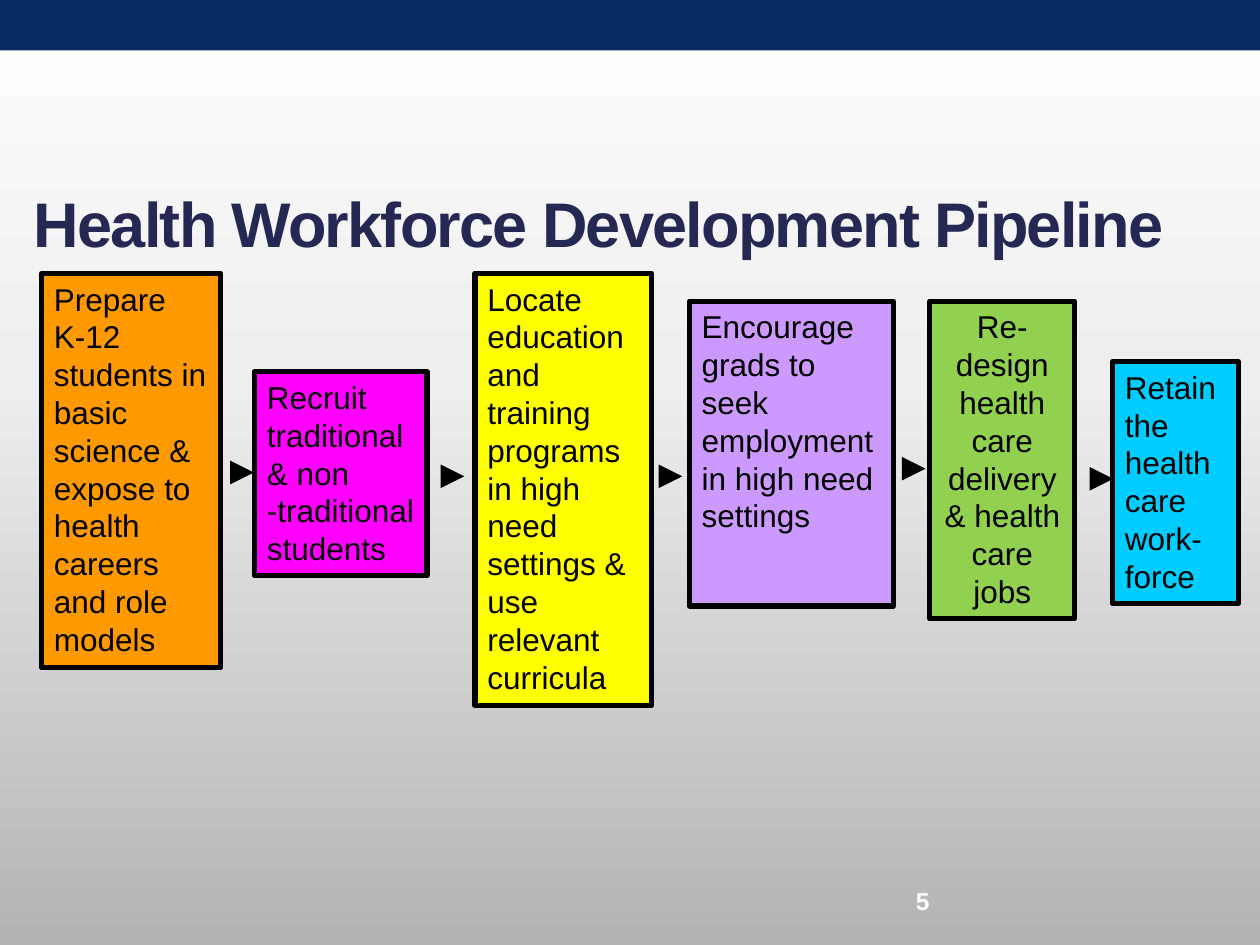
from copy import deepcopy
from dataclasses import dataclass

from lxml.etree import SubElement
from pptx import Presentation
from pptx.dml.color import RGBColor
from pptx.enum.shapes import MSO_CONNECTOR, MSO_SHAPE
from pptx.enum.text import MSO_ANCHOR, PP_ALIGN
from pptx.oxml.ns import qn
from pptx.shapes.autoshape import Shape
from pptx.slide import Slide
from pptx.util import Inches, Pt

WHITE = RGBColor(0xFF, 0xFF, 0xFF)
BLACK = RGBColor(0, 0, 0)
NAVY = RGBColor(0x07, 0x2B, 0x62)
INDIGO = RGBColor(0x24, 0x28, 0x52)
ORANGE = RGBColor(0xFF, 0x99, 0x00)
PINK = RGBColor(0xFF, 0x00, 0xFF)
YELLOW = RGBColor(0xFF, 0xFF, 0x00)
LILAC = RGBColor(0xCC, 0x99, 0xFF)
GREEN = RGBColor(0x92, 0xD0, 0x50)
CYAN = RGBColor(0x00, 0xCC, 0xFF)
SHADES = [(0, WHITE), (0.4, RGBColor(0xEE, 0xEE, 0xEE)),
          (1, RGBColor(0xB4, 0xB4, 0xB4))]

FONT = "Arial"
WIDTH, HEIGHT = Inches(10), Inches(7.5)
CELL = WIDTH / 100  # square grid: 100 columns by 75 rows
REACH = 1.85  # arrow length in columns


@dataclass
class Area:
    col: float
    row: float
    cols: float
    rows: float

    def box(self) -> list[int]:
        return [grid(n) for n in (self.col, self.row, self.cols, self.rows)]


@dataclass
class Stage:
    text: str
    area: Area
    fill: RGBColor
    align: PP_ALIGN = PP_ALIGN.LEFT


@dataclass
class Arrow:
    col: float
    row: float


STAGES = [
    Stage("Prepare K-12 students in basic science & expose to health careers and role models",
          Area(3.3, 21.7, 14.2, 31.3), ORANGE),
    Stage("Recruit traditional & non -traditional students",
          Area(20.2, 29.5, 13.7, 16.2), PINK),
    Stage("Locate education and training programs in high need settings & use relevant curricula",
          Area(37.7, 21.7, 14, 34.3), YELLOW),
    Stage("Encourage grads to seek employment in high need settings",
          Area(54.7, 23.9, 16.2, 24.2), LILAC),
    Stage("Re-design health care delivery & health care jobs",
          Area(73.8, 23.9, 11.5, 25.2), GREEN, PP_ALIGN.CENTER),
    Stage("Retain the health care work-force",
          Area(88.3, 28.7, 10, 19.2), CYAN),
]
ARROWS = [Arrow(18.3, 37.5), Arrow(35, 37.8), Arrow(52.3, 37.8),
          Arrow(71.6, 37.2), Arrow(86.5, 38)]


def grid(n: float) -> int:
    return round(n * CELL)


def shade(slide: Slide) -> None:
    """Fill the background with a three-stop gradient, top to bottom."""
    fill = slide.background.fill
    fill.gradient()
    fill.gradient_angle = 270
    stops = fill._fill._gradFill.find(qn("a:gsLst"))
    stops.append(deepcopy(stops[-1]))
    for stop, (place, tint) in zip(fill.gradient_stops, SHADES):
        stop.position = place
        stop.color.rgb = tint


def block(slide: Slide, area: Area, fill: RGBColor) -> Shape:
    shape = slide.shapes.add_shape(MSO_SHAPE.RECTANGLE, *area.box())
    shape.shadow.inherit = False
    shape.fill.solid()
    shape.fill.fore_color.rgb = fill
    shape.line.fill.background()
    return shape


def write(shape: Shape, text: str, size: float, tint: RGBColor,
          bold: bool = False, align: PP_ALIGN = PP_ALIGN.LEFT,
          anchor: MSO_ANCHOR = MSO_ANCHOR.MIDDLE) -> None:
    frame = shape.text_frame
    frame.word_wrap = True
    frame.vertical_anchor = anchor
    para = frame.paragraphs[0]
    para.text = text
    para.alignment = align
    font = para.font
    font.name, font.size, font.bold = FONT, Pt(size), bold
    font.color.rgb = tint


def draw_stage(slide: Slide, stage: Stage) -> None:
    shape = block(slide, stage.area, stage.fill)
    shape.line.color.rgb = BLACK
    shape.line.width = Pt(3)
    write(shape, stage.text, 18, BLACK, align=stage.align, anchor=MSO_ANCHOR.TOP)


def draw_arrow(slide: Slide, arrow: Arrow) -> None:
    y = grid(arrow.row)
    link = slide.shapes.add_connector(
        MSO_CONNECTOR.STRAIGHT, grid(arrow.col), y, grid(arrow.col + REACH), y)
    link.line.color.rgb = BLACK
    link.line.width = Pt(4.5)
    SubElement(link.line._get_or_add_ln(), qn("a:tailEnd"), type="triangle")
    SubElement(link._element.spPr, qn("a:effectLst"))


def main() -> None:
    deck = Presentation()
    deck.slide_width, deck.slide_height = WIDTH, HEIGHT
    slide = deck.slides.add_slide(deck.slide_layouts[6])
    shade(slide)
    block(slide, Area(0, 2.4, 100, 2.5), WHITE)
    block(slide, Area(0, 0, 100, 4), NAVY)

    title = slide.shapes.add_textbox(*Area(1.7, 11.4, 96.7, 12.5).box())
    write(title, "Health Workforce Development Pipeline", 36, INDIGO, bold=True)
    run = title.text_frame.paragraphs[0].runs[0]
    run._r.get_or_add_rPr().set("spc", "-100")

    for stage in STAGES:
        draw_stage(slide, stage)
    for arrow in ARROWS:
        draw_arrow(slide, arrow)

    number = slide.shapes.add_textbox(*Area(71.7, 69.5, 23.3, 4).box())
    write(number, "5", 14, WHITE, bold=True)
    deck.save("out.pptx")


if __name__ == "__main__":
    main()
